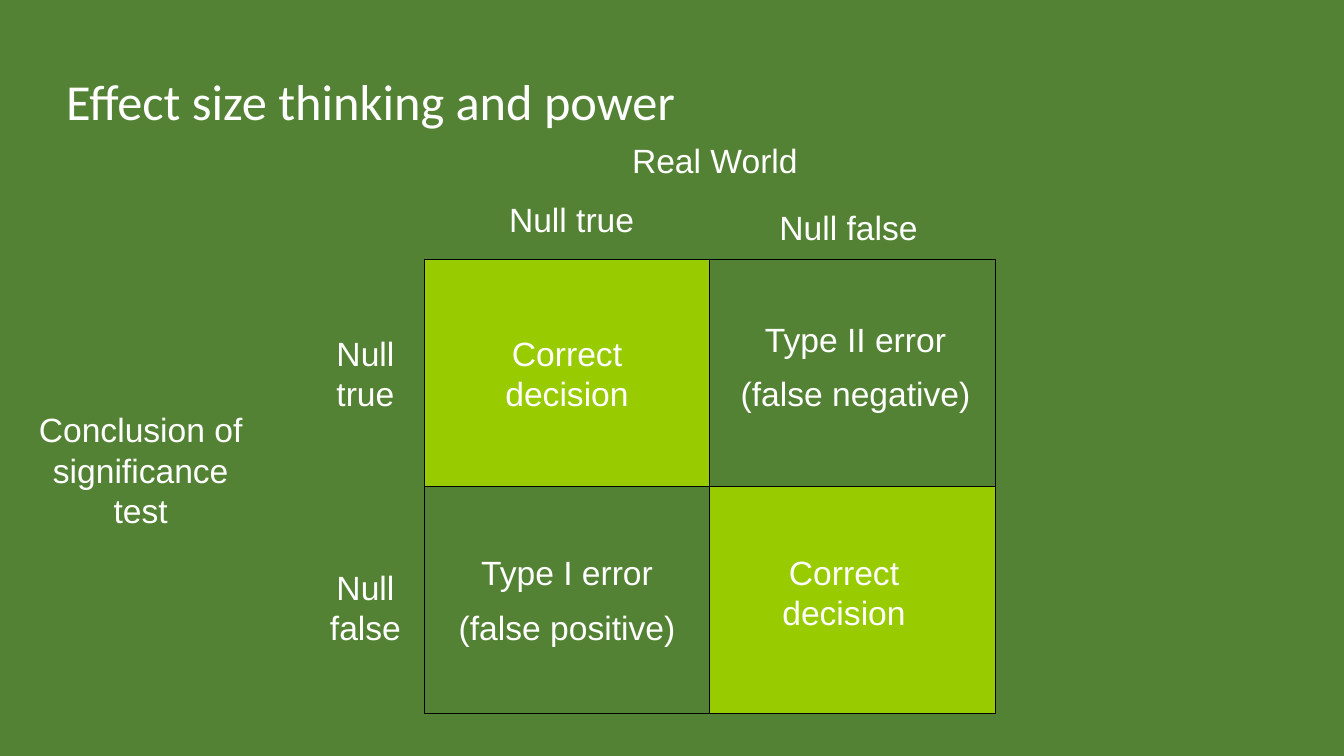
from lxml.etree import SubElement
from pptx import Presentation
from pptx.dml.color import RGBColor
from pptx.enum.shapes import MSO_CONNECTOR, MSO_SHAPE
from pptx.enum.text import PP_ALIGN
from pptx.oxml.ns import qn
from pptx.util import Cm, Pt

COLORS = {"background": "548235", "correct": "99CC00", "line": "000000", "text": "FFFFFF"}
LINE_WIDTH = Pt(0.75)


def color(name):
    return RGBColor.from_string(COLORS[name])


def add_text(slide, box, lines, size=24, font="Arial", align=PP_ALIGN.CENTER, space=10.2):
    """Write one paragraph per line in a box of left, top, width, height in cm."""
    frame = slide.shapes.add_textbox(*map(Cm, box)).text_frame
    frame.word_wrap = True
    frame.margin_left = frame.margin_right = Cm(0.24)
    frame.margin_top = frame.margin_bottom = Cm(0.13)
    for index, line in enumerate(lines):
        para = frame.paragraphs[0] if index == 0 else frame.add_paragraph()
        para.text = line
        para.alignment = align
        para.space_before = Pt(space)
        para.font.size = Pt(size)
        para.font.name = font
        para.font.color.rgb = color("text")


def add_cell(slide, box, fill=None):
    cell = slide.shapes.add_shape(MSO_SHAPE.RECTANGLE, *map(Cm, box))
    cell.shadow.inherit = False
    if fill:
        cell.fill.solid()
        cell.fill.fore_color.rgb = color(fill)
    else:
        cell.fill.background()
    cell.line.color.rgb = color("line")
    cell.line.width = LINE_WIDTH


def add_divider(slide, *ends):
    divider = slide.shapes.add_connector(MSO_CONNECTOR.STRAIGHT, *map(Cm, ends))
    divider.line.color.rgb = color("line")
    divider.line.width = LINE_WIDTH
    SubElement(divider._element.spPr, qn("a:effectLst"))


def add_grid(slide, box):
    """Draw the two by two grid with correct decisions on the diagonal."""
    left, top, width, height = box
    middle_x, middle_y = left + width / 2, top + height / 2
    for x, y in ((middle_x, middle_y), (left, top)):
        add_cell(slide, (x, y, width / 2, height / 2), "correct")
    add_cell(slide, box)
    add_divider(slide, middle_x, top, middle_x, top + height)
    add_divider(slide, left, middle_y, left + width, middle_y)


def add_outcomes(slide, box):
    """Place the text of the four cells inside the grid box."""
    outcomes = (
        (0.64, 1.71, 5.92, 2.34, ["Correct decision"]),
        (7.62, 7.22, 5.92, 2.34, ["Correct decision"]),
        (7.62, 1.35, 6.5, 2.69, ["Type II error", "(false negative)"]),
        (0.54, 7.24, 6.12, 2.69, ["Type I error", "(false positive)"]),
    )
    add_offset_texts(slide, box, outcomes)


def add_axis_labels(slide, box):
    """Place the headings above and to the left of the grid box."""
    labels = (
        (4.25, -3.15, 6.15, 1.32, ["Real World"]),
        (0.64, -1.67, 6.15, 1.32, ["Null true"]),
        (7.62, -1.47, 6.15, 1.32, ["Null false"]),
        (-3.17, 1.71, 3.38, 2.34, ["Null true"]),
        (-3.17, 7.6, 3.38, 2.34, ["Null false"]),
        (-10.22, 3.63, 6.15, 3.53, ["Conclusion of significance test"]),
    )
    add_offset_texts(slide, box, labels)


def add_offset_texts(slide, box, entries):
    left, top = box[:2]
    for x, y, width, height, lines in entries:
        add_text(slide, (left + x, top + y, width, height), lines)


def main():
    deck = Presentation()
    deck.slide_width, deck.slide_height = Cm(33.87), Cm(19.05)
    slide = deck.slides.add_slide(deck.slide_layouts[6])
    slide.background.fill.solid()
    slide.background.fill.fore_color.rgb = color("background")

    grid_box = (10.69, 6.55, 14.4, 11.43)
    add_grid(slide, grid_box)
    add_axis_labels(slide, grid_box)
    add_outcomes(slide, grid_box)
    add_text(slide, (1.43, 1.65, 27.2, 1.8), ["Effect size thinking and power"],
             size=36, font="Calibri", align=PP_ALIGN.LEFT, space=0)
    deck.save("out.pptx")


if __name__ == "__main__":
    main()
